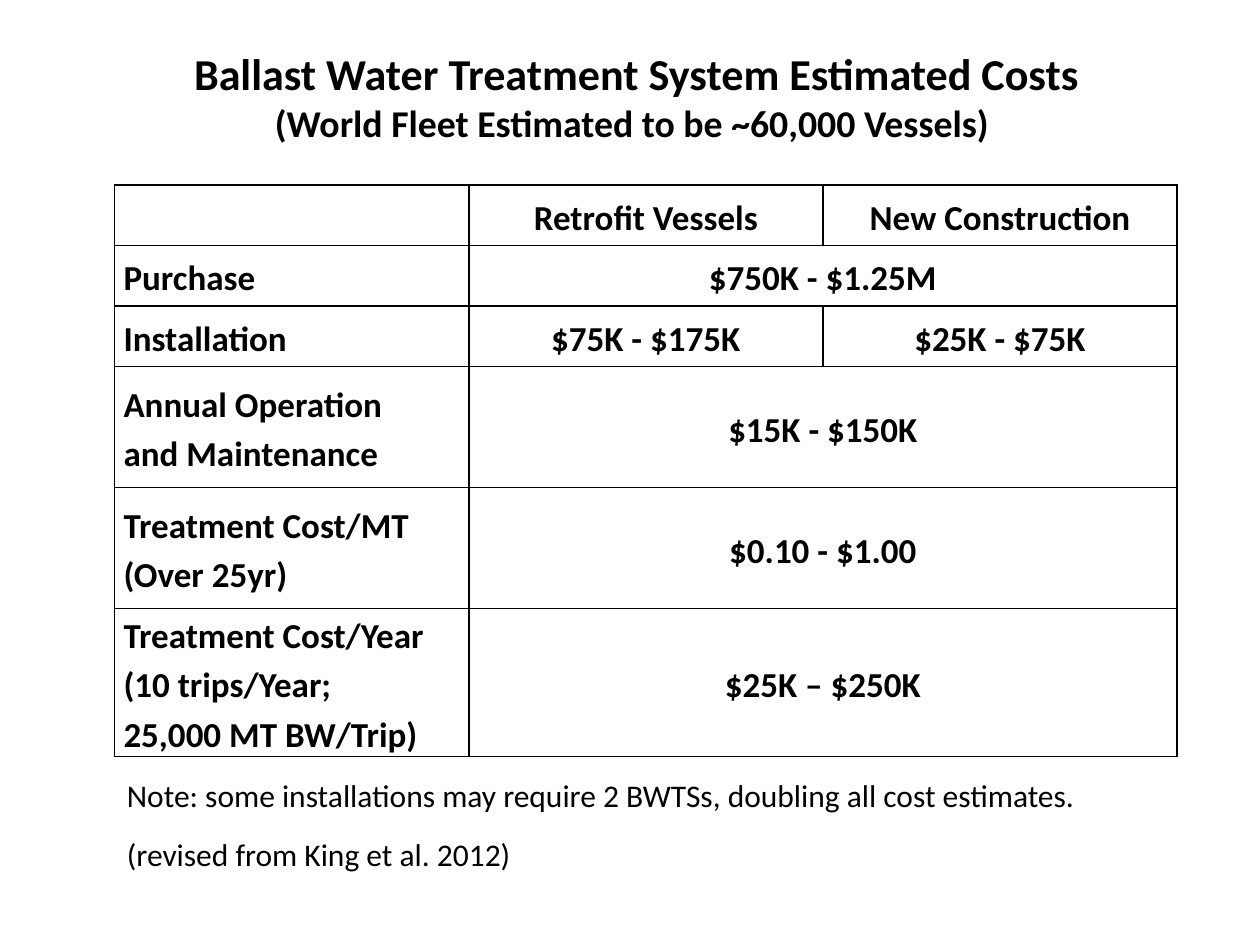
import pptx
import pptx.util
import pptx.dml.color
import pptx.enum.text
import pptx.oxml
import pptx.oxml.ns

Cm = pptx.util.Cm
Pt = pptx.util.Pt
Align = pptx.enum.text.PP_ALIGN
Anchor = pptx.enum.text.MSO_ANCHOR
Fit = pptx.enum.text.MSO_AUTO_SIZE

FONT = "Calibri"
INK = "000000"
TITLE = [
    ("Ballast Water Treatment System Estimated Costs", 25.2),
    ("(World Fleet Estimated to be ~60,000 Vessels) ", 21.6),
]
COSTS = [
    ([], ["Retrofit Vessels", "New Construction"]),
    (["Purchase"], ["$750K - $1.25M"]),
    (["Installation"], ["$75K - $175K", "$25K - $75K"]),
    (["Annual Operation", "and Maintenance"], ["$15K - $150K"]),
    (["Treatment Cost/MT (Over 25yr)"], ["$0.10 - $1.00"]),
    (["Treatment Cost/Year", "(10 trips/Year;", "25,000 MT BW/Trip)"], ["$25K – $250K"]),
]
NOTES = [
    ("(revised from King et al. 2012)", 16.71, 8.33, False),
    ("Note: some installations may require 2 BWTSs, doubling all cost estimates.", 15.52, 21.42, True),
]
LEFT, TOP = 2.31, 3.73
WIDE, LOW, HIGH = 7.14, 1.22, 2.44
SHORT = 3


def shade(code):
    return pptx.dml.color.RGBColor.from_string(code)


def write(para, text, size, bold=False):
    run = para.add_run()
    run.text = text
    run.font.name = FONT
    run.font.size = Pt(size)
    run.font.bold = bold
    run.font.color.rgb = shade(INK)


def rule(cell):
    props = cell._tc.get_or_add_tcPr()
    for side in ("lnL", "lnR", "lnT", "lnB"):
        props.append(pptx.oxml.parse_xml(
            f'<a:{side} {pptx.oxml.ns.nsdecls("a")} w="{Pt(1)}">'
            f'<a:solidFill><a:srgbClr val="{INK}"/></a:solidFill></a:{side}>'
        ))
    cell.fill.background()


def fill(cell, lines, align):
    cell.vertical_anchor = Anchor.MIDDLE
    cell.margin_left = cell.margin_right = Cm(0.18)
    cell.margin_top = cell.margin_bottom = 0
    frame = cell.text_frame
    for i, line in enumerate(lines):
        para = frame.add_paragraph() if i else frame.paragraphs[0]
        para.alignment = align
        para.line_spacing = 1.15
        write(para, line, 20, True)


def head(slide):
    title = slide.shapes.title
    title.left, title.top = Cm(1.3), Cm(0.74)
    title.width, title.height = Cm(23.06), Cm(2.39)
    frame = title.text_frame
    frame.auto_size = Fit.NONE
    frame.vertical_anchor = Anchor.MIDDLE
    para = frame.paragraphs[0]
    para.alignment = Align.CENTER
    for i, (text, size) in enumerate(TITLE):
        if i:
            para.add_line_break()
        write(para, text, size, True)


def grid(slide):
    highs = [LOW if i < SHORT else HIGH for i in range(len(COSTS))]
    shape = slide.shapes.add_table(
        len(COSTS), 3, Cm(LEFT), Cm(TOP), Cm(3 * WIDE), Cm(sum(highs)))
    table = shape.table
    table.first_row = table.horz_banding = False
    for col in table.columns:
        col.width = Cm(WIDE)
    for r, (label, costs) in enumerate(COSTS):
        table.rows[r].height = Cm(highs[r])
        for c in range(3):
            rule(table.cell(r, c))
        if len(costs) == 1:
            table.cell(r, 1).merge(table.cell(r, 2))
        fill(table.cell(r, 0), label, Align.LEFT)
        for c, cost in enumerate(costs, 1):
            fill(table.cell(r, c), [cost], Align.CENTER)


def main():
    deck = pptx.Presentation()
    deck.slide_width, deck.slide_height = Cm(25.4), Cm(19.05)
    slide = deck.slides.add_slide(deck.slide_layouts[5])
    head(slide)
    grid(slide)
    for text, top, width, wrap in NOTES:
        box = slide.shapes.add_textbox(Cm(LEFT), Cm(top), Cm(width), Cm(1.02))
        box.text_frame.word_wrap = wrap
        box.text_frame.auto_size = Fit.SHAPE_TO_FIT_TEXT
        write(box.text_frame.paragraphs[0], text, 18)
    deck.save("out.pptx")


if __name__ == "__main__":
    main()
